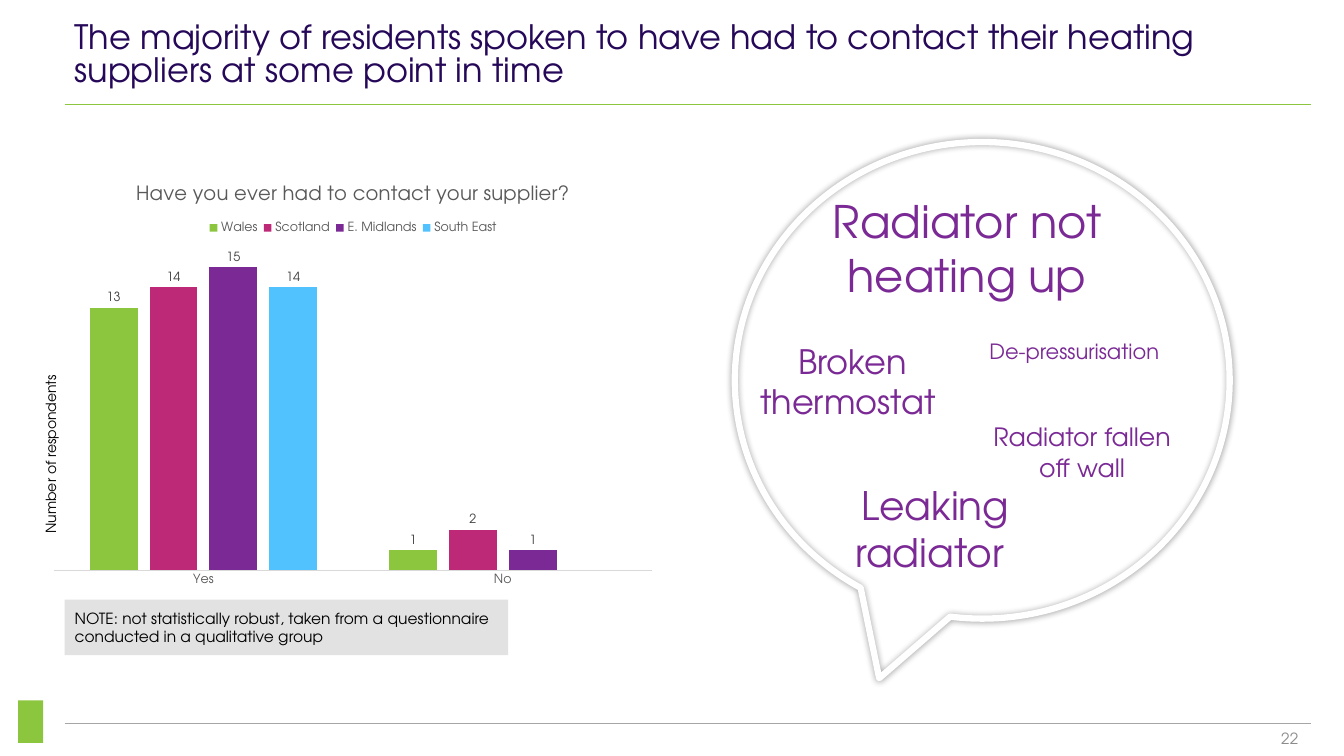
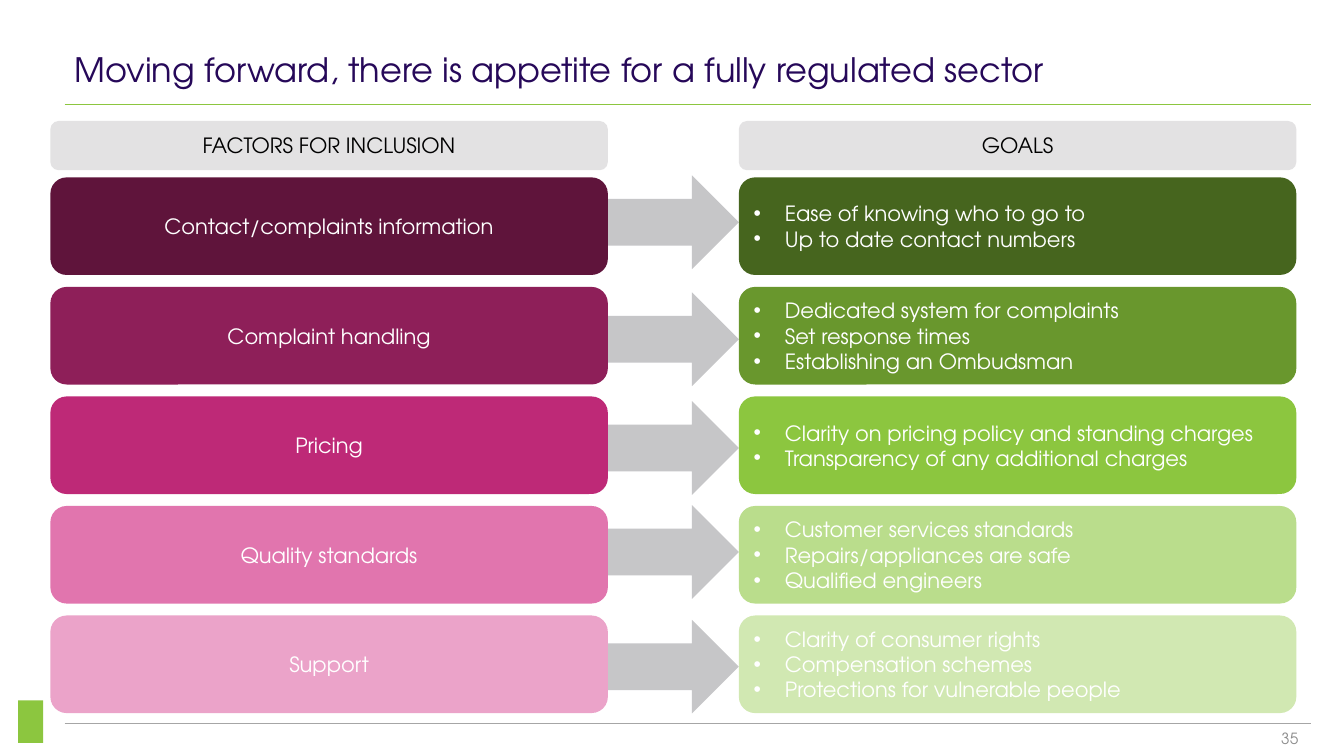
from lxml import etree
from pptx import Presentation
from pptx.chart.data import CategoryChartData
from pptx.dml.color import RGBColor
from pptx.enum import chart as charts, shapes, text
from pptx.oxml import ns
from pptx.util import Cm, Pt

FONT = "TeX Gyre Adventor"
COLORS = {
    "title": "260859", "green": "8CC63F", "pink": "BE2977",
    "purple": "7A2995", "blue": "52C2FF", "black": "000000",
    "white": "FFFFFF", "panel": "E3E2E3", "arrow": "C6C6C8",
    "footer": "A6A6A6", "number": "8C8C8C", "axis": "D9D9D9",
    "label": "404040", "muted": "595959",
    "pink1": "5F143B", "pink2": "8E1F59", "pink4": "E175AE", "pink5": "EBA3C9",
    "green1": "46651E", "green2": "69972D", "green4": "BADD8C", "green5": "D1E8B2",
}
LEFT, RIGHT = 1.63, 33.05
CENTER = text.PP_ALIGN.CENTER

# words, left, top, width, height, size
FAULTS = [
    ("Radiator not heating up", 20.5, 4.78, 7.75, 2.92, 32),
    ("De-pressurisation ", 24.51, 8, 5.28, 1.7, 15),
    ("Leaking radiator ", 20.65, 11.76, 5.84, 3.12, 28),
    ("Broken thermostat ", 18.24, 8.2, 6.5, 2.79, 24),
    ("Radiator fallen off wall", 24.31, 10.54, 5.92, 1.7, 18),
]
CONTACTS = [
    ("Wales", (13, 1), "green"),
    ("Scotland", (14, 2), "pink"),
    ("E. Midlands", (15, 1), "purple"),
    ("South East", (14, None), "blue"),
]
# factor, its fill, goals, their fill, middle of the arrow
FACTORS = [
    ("Contact/complaints information", "pink1",
     ["Ease of knowing who to go to", "Up to date contact numbers"],
     "green1", 5.6),
    ("Complaint handling", "pink2",
     ["Dedicated system for complaints", "Set response times",
      "Establishing an Ombudsman"], "green2", 8.55),
    ("Pricing", "pink",
     ["Clarity on pricing policy and standing charges",
      "Transparency of any additional charges"], "green", 11.29),
    ("Quality standards", "pink4",
     ["Customer services standards", "Repairs/appliances are safe",
      "Qualified engineers"], "green4", 13.91),
    ("Support", "pink5",
     ["Clarity of consumer rights", "Compensation schemes",
      "Protections for vulnerable people"], "green5", 16.8),
]


def rgb(name):
    return RGBColor.from_string(COLORS[name])


def style_font(font, size, color):
    font.name, font.size, font.bold = FONT, Pt(size), False
    font.color.rgb = rgb(color)


def add_bullet(p):
    pPr = p._p.get_or_add_pPr()
    pPr.set("marL", str(Cm(0.79)))
    pPr.set("indent", str(-Cm(0.79)))
    etree.SubElement(pPr, ns.qn("a:buFont")).set("typeface", "Arial")
    etree.SubElement(pPr, ns.qn("a:buChar")).set("char", "•")


def write(sp, lines, size, color, align=text.PP_ALIGN.LEFT,
          anchor=text.MSO_ANCHOR.MIDDLE, bullets=False):
    tf = sp.text_frame
    tf.word_wrap = True
    tf.vertical_anchor = anchor
    for i, line in enumerate(lines):
        p = tf.add_paragraph() if i else tf.paragraphs[0]
        if bullets:
            add_bullet(p)
        p.alignment = align
        r = p.add_run()
        r.text = line
        style_font(r.font, size, color)
    return tf


def add_box(s, kind, left, top, width, height, fill=None):
    """Add a preset shape without outline or shadow."""
    sp = s.shapes.add_shape(kind, Cm(left), Cm(top), Cm(width), Cm(height))
    sp.shadow.inherit = False
    sp.line.fill.background()
    if fill:
        sp.fill.solid()
        sp.fill.fore_color.rgb = rgb(fill)
    else:
        sp.fill.background()
    return sp


def add_label(s, left, top, width, height):
    return s.shapes.add_textbox(Cm(left), Cm(top), Cm(width), Cm(height))


def add_rule(s, y, color):
    line = s.shapes.add_connector(shapes.MSO_CONNECTOR.STRAIGHT,
                                  Cm(LEFT), Cm(y), Cm(RIGHT), Cm(y))
    line.line.color.rgb = rgb(color)
    line.line.width = Pt(0.5)
    etree.SubElement(line._element.spPr, ns.qn("a:effectLst"))


def add_slide(prs, title, number):
    """Add a blank slide with title, rules, logo block and page number."""
    s = prs.slides.add_slide(prs.slide_layouts[6])
    add_rule(s, 18.24, "footer")
    add_rule(s, 2.63, "green")
    add_box(s, shapes.MSO_SHAPE.RECTANGLE, 0.46, 17.65, 0.63, 1.07, "green")
    write(add_label(s, 30.25, 18.26, 2.72, 0.69), [number], 11, "number",
          text.PP_ALIGN.RIGHT, text.MSO_ANCHOR.TOP)
    tf = write(add_label(s, LEFT, 0.28, 31.39, 2.08), [title], 24, "title",
               anchor=text.MSO_ANCHOR.BOTTOM)
    tf.paragraphs[0].line_spacing = 0.8
    return s


def place(part, index, inner=False, **fractions):
    """Fix a chart part at fractions of the chart's size."""
    for old in part.findall(ns.qn("c:layout")):
        part.remove(old)
    layout = etree.Element(ns.qn("c:layout"))
    manual = etree.SubElement(layout, ns.qn("c:manualLayout"))
    values = {"layoutTarget": "inner"} if inner else {}
    values.update(xMode="edge", yMode="edge", **fractions)
    for tag, value in values.items():
        etree.SubElement(manual, ns.qn(f"c:{tag}")).set("val", str(value))
    part.insert(index, layout)


def add_contact_chart(s):
    data = CategoryChartData()
    data.categories = ["Yes", "No"]
    for name, values, _ in CONTACTS:
        data.add_series(name, values)
    chart = s.shapes.add_chart(charts.XL_CHART_TYPE.COLUMN_CLUSTERED, Cm(1.04),
                               Cm(4.19), Cm(15.72), Cm(10.72), data).chart
    style_font(chart.font, 10, "black")

    chart.has_title = True
    r = chart.chart_title.text_frame.paragraphs[0].add_run()
    r.text = "Have you ever had to contact your supplier?"
    style_font(r.font, 14, "muted")

    chart.has_legend = True
    chart.legend.position = charts.XL_LEGEND_POSITION.TOP
    chart.legend.include_in_layout = False
    style_font(chart.legend.font, 9, "muted")

    value_axis, axis = chart.value_axis, chart.category_axis
    value_axis.visible = False
    value_axis.has_major_gridlines = False
    value_axis.minimum_scale, value_axis.maximum_scale = 0, 16
    axis.major_tick_mark = charts.XL_TICK_MARK.NONE
    axis.format.line.color.rgb = rgb("axis")
    axis.format.line.width = Pt(0.75)
    style_font(axis.tick_labels.font, 9, "muted")

    plot = chart.plots[0]
    plot.gap_width, plot.overlap = 150, -25
    plot.vary_by_categories = False
    for series, (_, _, color) in zip(plot.series, CONTACTS):
        series.format.fill.solid()
        series.format.fill.fore_color.rgb = rgb(color)
        labels = series.data_labels
        labels.show_value = True
        labels.position = charts.XL_LABEL_POSITION.OUTSIDE_END
        style_font(labels.font, 9, "label")

    root = chart._chartSpace
    place(root.find(".//" + ns.qn("c:plotArea")), 0, True,
          x=0.02, y=0.19, w=0.96, h=0.76)
    place(root.find(".//" + ns.qn("c:legend")), 1, x=0.26, y=0.12, w=0.48, h=0.05)


def add_speech_bubble(s):
    sp = add_box(s, shapes.MSO_SHAPE.OVAL_CALLOUT, 18.52, 3.58, 12.47, 12.01)
    sp.line.color.rgb = rgb("white")
    sp.line.width = Pt(4.5)
    effects = sp._element.spPr.find(ns.qn("a:effectLst"))
    glow = etree.SubElement(effects, ns.qn("a:outerShdw"),
                            blurRad=str(Pt(5)), dist="0", dir="0",
                            algn="ctr", rotWithShape="0")
    color = etree.SubElement(glow, ns.qn("a:srgbClr"), val=COLORS["black"])
    etree.SubElement(color, ns.qn("a:alpha"), val="40000")


def build_contact_slide(prs):
    s = add_slide(prs, "The majority of residents spoken to have had to contact "
                  "their heating suppliers at some point in time", "22")
    note = add_box(s, shapes.MSO_SHAPE.RECTANGLE, LEFT, 15.11, 11.18, 1.4, "panel")
    write(note, ["NOTE: not statistically robust, taken from a questionnaire "
                 "conducted in a qualitative group"], 11, "black")
    for words, left, top, width, height, size in FAULTS:
        sp = add_box(s, shapes.MSO_SHAPE.ROUNDED_RECTANGLE, left, top, width, height)
        write(sp, [words], size, "purple", CENTER)
    add_speech_bubble(s)
    add_contact_chart(s)
    axis_title = add_label(s, -2.49, 9.58, 7.54, 0.69)
    axis_title.rotation = 270
    write(axis_title, ["Number of respondents"], 10, "black",
          anchor=text.MSO_ANCHOR.TOP)


def build_goals_slide(prs):
    s = add_slide(prs, "Moving forward, there is appetite for a fully "
                  "regulated sector", "35")
    factor_x, goal_x, width = 1.27, 18.62, 14.05
    first_row, pitch, height = 4.47, 2.76, 2.46
    arrow_width, arrow_height = 6.43, 2.36
    rounded = shapes.MSO_SHAPE.ROUNDED_RECTANGLE
    for *_, middle in FACTORS:
        add_box(s, shapes.MSO_SHAPE.RIGHT_ARROW, goal_x - arrow_width,
                middle - arrow_height / 2, arrow_width, arrow_height, "arrow")
    for x, heading in ((factor_x, "FACTORS FOR INCLUSION"), (goal_x, "GOALS")):
        sp = add_box(s, rounded, x, 3.05, width, 1.24, "panel")
        write(sp, [heading], 15, "black", CENTER)
    for i, (factor, factor_fill, goals, goal_fill, _) in enumerate(FACTORS):
        top = first_row + i * pitch
        sp = add_box(s, rounded, factor_x, top, width, height, factor_fill)
        write(sp, [factor], 15, "white", CENTER)
        sp = add_box(s, rounded, goal_x, top, width, height, goal_fill)
        write(sp, goals, 15, "white", bullets=True)


def main():
    prs = Presentation()
    prs.slide_width, prs.slide_height = Cm(33.87), Cm(19.05)
    build_contact_slide(prs)
    build_goals_slide(prs)
    prs.save("out.pptx")


if __name__ == "__main__":
    main()
